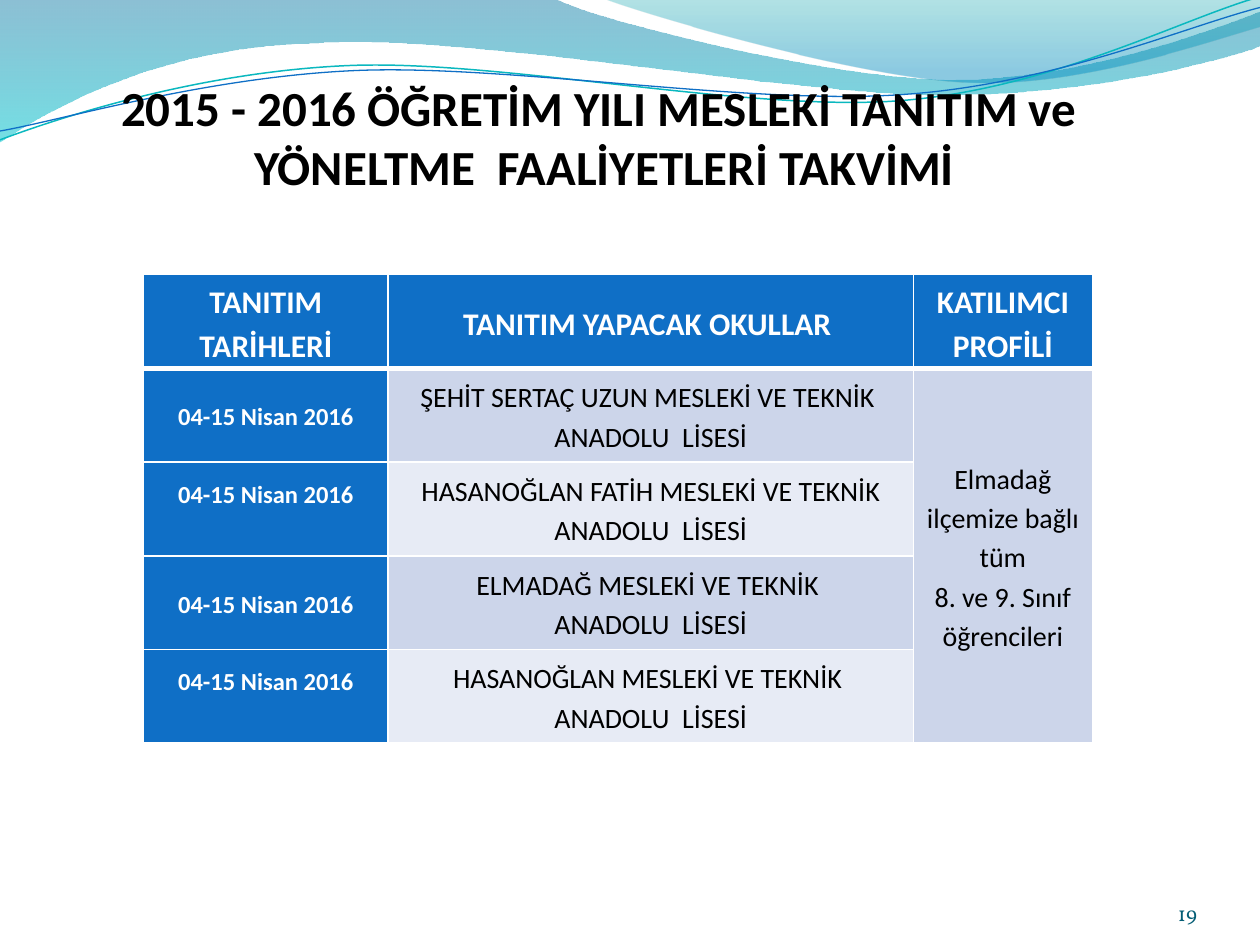
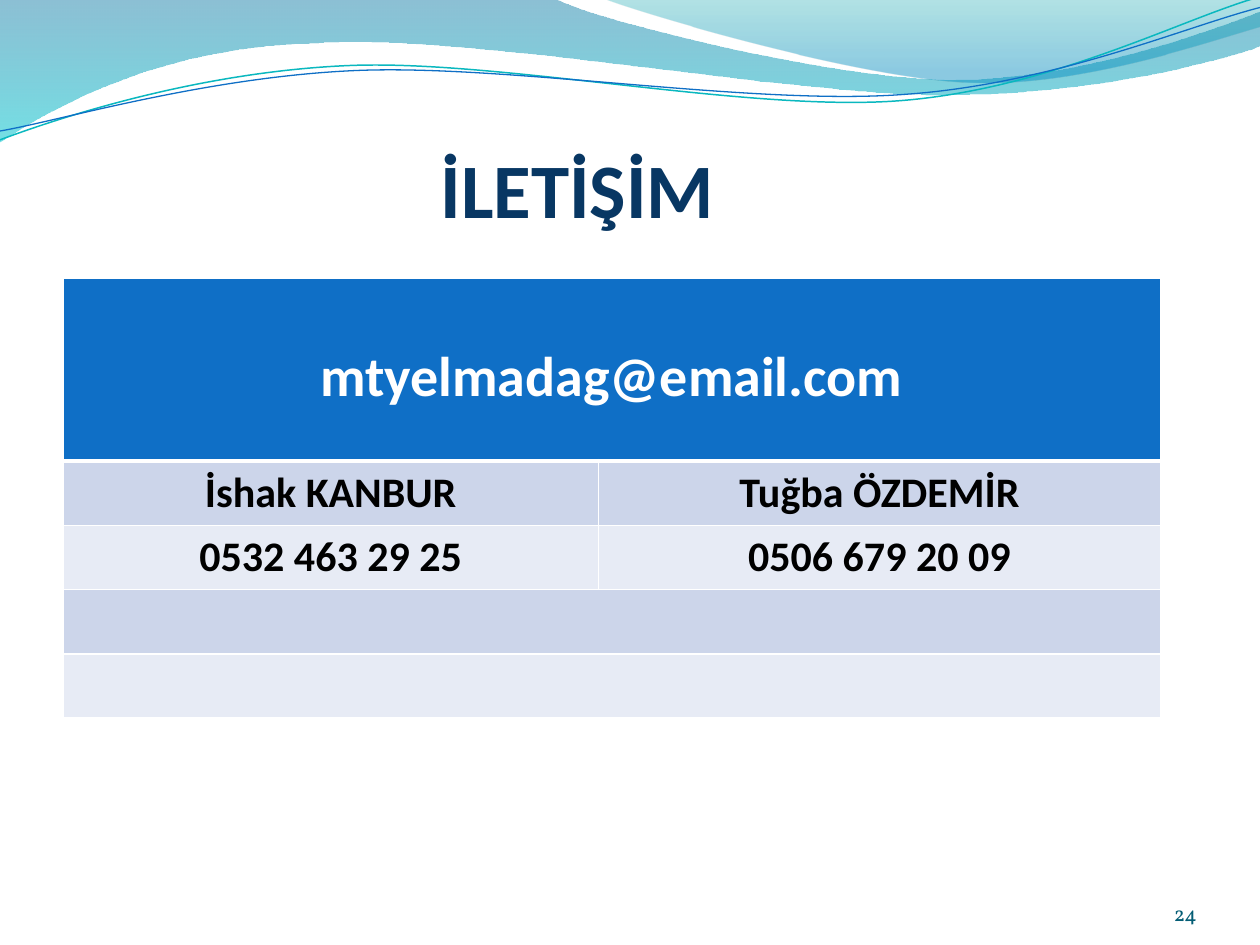
import math

import pptx
import pptx.dml.color
import pptx.enum.text
import pptx.oxml
import pptx.oxml.ns
import pptx.util
from pptx.util import Inches

COLORS = {
    "white": "FFFFFF", "black": "000000", "blue": "0F6FC6", "navy": "083763",
    "band_dark": "CCD5EA", "band_light": "E7EBF5", "page_number": "045D75",
    "teal_line": "0AB8BF", "wave_top": "0074A1", "wave_bottom": "00C6CF",
    "crest_top": "00A1A9", "crest_bottom": "008BBF",
}
FONT = "Calibri"
NUMBER_FONT = "Vollkorn"
TITLE_ONLY = 5
STRAND_TILT = 357.3
ALIGN = pptx.enum.text.PP_ALIGN
ANCHOR = pptx.enum.text.MSO_ANCHOR
NAMESPACE = pptx.oxml.ns.nsdecls("a")

# Each outline is a start point followed by lines (1 point) and Bézier curves (3 points).
WAVE = [[(0, 0)], [(4.4, -0.01)],
        [(4.76, 0.17), (6.64, 0.63), (7.58, 0.63)],
        [(8.53, 0.63), (9.58, 0.26), (10, 0.09)], [(10.01, 0.36)],
        [(9.83, 0.44), (8.7, 0.76), (7.46, 0.75)],
        [(6.22, 0.75), (3.82, 0.28), (2.57, 0.34)],
        [(1.29, 0.36), (0.46, 0.83), (-0.01, 1.13)], [(0, 0)]]
CREST = [[(4.79, -0.01)],
         [(5.09, 0.11), (6.82, 0.62), (7.69, 0.65)],
         [(8.56, 0.69), (9.61, 0.32), (10, 0.21)], [(10, 0)], [(4.79, -0.01)]]
TEAL_STRAND = [[(0, 1.11)],
               [(0.48, 0.93), (1.58, 0.57), (2.77, 0.52)],
               [(3.95, 0.47), (5.93, 0.89), (7.13, 0.8)],
               [(8.33, 0.71), (9.38, 0.15), (9.98, -0.02)]]
BLUE_STRAND = [[(0, 1.04)],
               [(0.47, 0.96), (1.64, 0.61), (2.83, 0.56)],
               [(4.03, 0.51), (5.97, 0.84), (7.17, 0.75)],
               [(8.36, 0.67), (9.41, 0.21), (10, 0.06)]]

DATE = "04-15 Nisan 2016"
CALENDAR_HEADS = ["TANITIM\nTARİHLERİ", "TANITIM YAPACAK OKULLAR ", "KATILIMCI PROFİLİ"]
SCHOOLS = [
    "ŞEHİT SERTAÇ UZUN MESLEKİ VE TEKNİK \nANADOLU  LİSESİ",
    "HASANOĞLAN FATİH MESLEKİ VE TEKNİK ANADOLU  LİSESİ",
    "ELMADAĞ MESLEKİ VE TEKNİK \nANADOLU  LİSESİ",
    "HASANOĞLAN MESLEKİ VE TEKNİK \nANADOLU  LİSESİ",
]
AUDIENCE = "Elmadağ ilçemize bağlı tüm\n8. ve 9. Sınıf öğrencileri"
CONTACTS = [("İshak KANBUR", "Tuğba ÖZDEMİR"), ("0532 463 29 25", "0506 679 20 09")]


def rgb(name):
    return pptx.dml.color.RGBColor.from_string(COLORS[name])


def band_color(row):
    return "band_dark" if row % 2 else "band_light"


def format_text(frame, size, color, bold=False, font=FONT, align=ALIGN.CENTER, spacing=None):
    for para in frame.paragraphs:
        para.alignment = align
        if spacing:
            para.line_spacing = spacing
        for span in para.runs:
            span.font.name = font
            span.font.size = pptx.util.Pt(size)
            span.font.bold = bold
            span.font.color.rgb = rgb(color)


def set_margins(target, left, top, right, bottom):
    target.margin_left, target.margin_top = Inches(left), Inches(top)
    target.margin_right, target.margin_bottom = Inches(right), Inches(bottom)


def draw_outline(page, outline, close):
    """Draw all points as a polygon, then join each group of three into a curve."""
    points = [(Inches(x), Inches(y)) for segment in outline for x, y in segment]
    builder = page.shapes.build_freeform(*points[0])
    builder.add_line_segments(points[1:], close=close)
    shape = builder.convert_to_shape()
    shape.shadow.inherit = False
    lines = iter(list(shape.element.iter(pptx.oxml.ns.qn("a:lnTo"))))
    for segment in outline[1:]:
        group = [next(lines) for _ in segment]
        if len(group) == 3:
            curve = pptx.oxml.parse_xml(f"<a:cubicBezTo {NAMESPACE}/>")
            group[0].addprevious(curve)
            for line in group:
                curve.append(line[0])
                line.getparent().remove(line)
    return shape


def add_wave(page, outline, stops):
    """Draw a closed wave; stops are (position, colour, opacity in percent)."""
    wave = draw_outline(page, outline, True)
    wave.line.fill.background()
    wave.fill.gradient()
    wave.fill.gradient_angle = 270
    for stop, (position, color, _) in zip(wave.fill.gradient_stops, stops):
        stop.position = position
        stop.color.rgb = rgb(color)
    tints = wave.element.iter(pptx.oxml.ns.qn("a:srgbClr"))
    for tint, (_, _, opacity) in zip(tints, stops):
        tint.append(pptx.oxml.parse_xml(f'<a:alpha {NAMESPACE} val="{opacity * 1000}"/>'))
    return wave


def level_outline(outline, center):
    """Turn an outline back by the tilt that its shape will receive."""
    angle = math.radians(360 - STRAND_TILT)
    cos, sin = math.cos(angle), math.sin(angle)

    def level(x, y):
        across, down = x - center[0], y - center[1]
        return center[0] + across * cos - down * sin, center[1] + across * sin + down * cos

    return [[level(*point) for point in segment] for segment in outline]


def add_strand(page, outline, center, color, width):
    strand = draw_outline(page, level_outline(outline, center), False)
    strand.rotation = STRAND_TILT
    strand.fill.background()
    strand.line.color.rgb = rgb(color)
    strand.line.width = pptx.util.Pt(width)
    return strand


def add_master_waves(master, page):
    """Draw the header waves and move them from the page to the master."""
    shapes = [
        add_wave(page, WAVE, [(0, "wave_top", 45), (1, "wave_bottom", 55)]),
        add_wave(page, CREST, [(0, "crest_top", 30), (0.8, "crest_bottom", 45)]),
        add_strand(page, TEAL_STRAND, (4.99, 0.58), "teal_line", 0.85),
        add_strand(page, BLUE_STRAND, (5, 0.59), "blue", 0.75),
    ]
    for number, shape in enumerate(shapes):
        shape.element.nvSpPr.cNvPr.id = 100 + number
        master.shapes.element.append(shape.element)


def set_title(page, text, left, top, width, height, size, color):
    title = page.shapes.title
    title.left, title.top = Inches(left), Inches(top)
    title.width, title.height = Inches(width), Inches(height)
    frame = title.text_frame
    frame.text = text
    frame.auto_size = pptx.enum.text.MSO_AUTO_SIZE.NONE
    frame.vertical_anchor = ANCHOR.BOTTOM
    set_margins(frame, 0, 0.05, 0, 0)
    format_text(frame, size, color, bold=True)
    return title


def add_page_number(page, number):
    box = page.shapes.add_textbox(Inches(8.67), Inches(6.95), Inches(0.83), Inches(0.4))
    frame = box.text_frame
    frame.word_wrap = True
    frame.vertical_anchor = ANCHOR.BOTTOM
    set_margins(frame, 0, 0, 0, 0)
    frame.text = str(number)
    format_text(frame, 12, "page_number", font=NUMBER_FONT, align=ALIGN.RIGHT)


def add_grid(page, left, top, widths, heights):
    frame = page.shapes.add_table(len(heights), len(widths), Inches(left), Inches(top),
                                  Inches(sum(widths)), Inches(sum(heights)))
    table = frame.table
    for column, width in zip(table.columns, widths):
        column.width = Inches(width)
    for row, height in zip(table.rows, heights):
        row.height = Inches(height)
    return table


def fill_cell(cell, text, fill, size, color, bold, spacing=None):
    cell.text = text
    cell.fill.solid()
    cell.fill.fore_color.rgb = rgb(fill)
    format_text(cell.text_frame, size, color, bold, spacing=spacing)


def add_borders(table):
    """Rule the table in white, with a thick line below the header row."""
    for row_index, row in enumerate(table.rows):
        for cell in row.cells:
            if cell.is_spanned:
                continue
            widths = {"lnL": 1, "lnR": 1, "lnT": 3 if row_index == 1 else 1,
                      "lnB": 3 if row_index == 0 else 1}
            properties = cell._tc.get_or_add_tcPr()
            for place, (side, width) in enumerate(widths.items()):
                properties.insert(place, pptx.oxml.parse_xml(
                    f'<a:{side} {NAMESPACE} w="{width * 12700}"><a:solidFill>'
                    f'<a:srgbClr val="{COLORS["white"]}"/></a:solidFill></a:{side}>'))


def add_calendar(page):
    table = add_grid(page, 1.14, 2.18, [1.94, 4.17, 1.42], [3.72 / 5] * 5)
    table.cell(1, 2).merge(table.cell(4, 2))
    for column, head in enumerate(CALENDAR_HEADS):
        fill_cell(table.cell(0, column), head, "blue", 18, "white", True, 1.15)
    for row, school in enumerate(SCHOOLS, 1):
        fill_cell(table.cell(row, 0), DATE, "blue", 14, "white", True, 1.15)
        fill_cell(table.cell(row, 1), school, band_color(row), 16, "black", False, 1.15)
    fill_cell(table.cell(1, 2), AUDIENCE, "band_dark", 16, "black", False, 1.15)
    for cell in table.iter_cells():
        cell.vertical_anchor = ANCHOR.MIDDLE
        set_margins(cell, 0.07, 0, 0.07, 0)
    for row in (2, 4):
        table.cell(row, 0).margin_bottom = Inches(0.26)
    add_borders(table)


def add_contacts(page):
    table = add_grid(page, 0.5, 2.21, [4.25, 4.46], [1.45] + [0.51] * 4)
    for row in (0, 3, 4):
        table.cell(row, 0).merge(table.cell(row, 1))
    address = table.cell(0, 0)
    fill_cell(address, "mtyelmadag@email.com", "blue", 32, "white", True)
    address.margin_top = Inches(0.51)
    for row, texts in enumerate(CONTACTS, 1):
        for column, text in enumerate(texts):
            fill_cell(table.cell(row, column), text, band_color(row), 24, "black", True)
    for row in (3, 4):
        fill_cell(table.cell(row, 0), "", band_color(row), 18, "black", False)
    add_borders(table)


def main():
    deck = pptx.Presentation()
    deck.slide_width, deck.slide_height = Inches(10), Inches(7.5)
    layout = deck.slide_layouts[TITLE_ONLY]

    calendar_page = deck.slides.add_slide(layout)
    add_master_waves(deck.slide_master, calendar_page)
    set_title(calendar_page,
              "2015 - 2016 ÖĞRETİM YILI MESLEKİ TANITIM ve  YÖNELTME  FAALİYETLERİ TAKVİMİ",
              0.5, 0.3, 8.59, 1.25, 28, "black")
    add_calendar(calendar_page)
    add_page_number(calendar_page, 19)

    contact_page = deck.slides.add_slide(layout)
    title = set_title(contact_page, "İLETİŞİM", 0.5, 1.07, 8.17, 0.79, 44, "navy")
    title.fill.solid()
    title.fill.fore_color.rgb = rgb("white")
    add_contacts(contact_page)
    add_page_number(contact_page, 24)

    deck.save("out.pptx")


if __name__ == "__main__":
    main()
